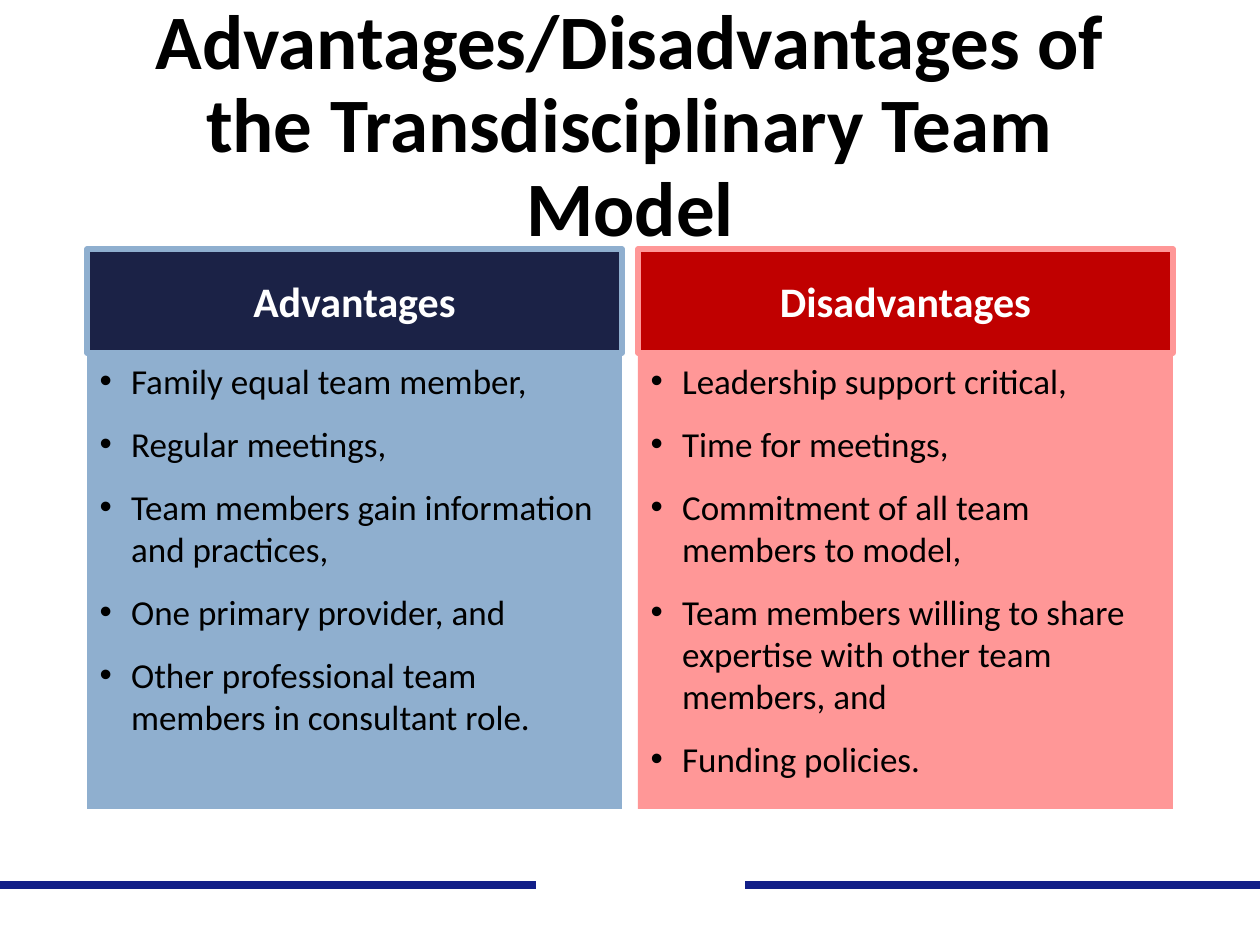
from lxml import etree
from pptx import Presentation
from pptx.dml.color import RGBColor
from pptx.enum.shapes import MSO_CONNECTOR
from pptx.enum.text import MSO_ANCHOR, MSO_AUTO_SIZE, PP_ALIGN
from pptx.oxml.ns import qn
from pptx.util import Emu, Pt

STRAIGHT = MSO_CONNECTOR.STRAIGHT
MIDDLE, TOP = MSO_ANCHOR.MIDDLE, MSO_ANCHOR.TOP
CENTER, LEFT = PP_ALIGN.CENTER, PP_ALIGN.LEFT
NO_FIT = MSO_AUTO_SIZE.NONE
SCALE = 914400 / 126  # EMU per px

COLORS = {
    "black": "000000", "white": "FFFFFF", "rule": "121F88",
    "navy": "1B2246", "blue": "8FAFCF", "red": "C00000", "pink": "FF9797",
}


def px(length):
    return Emu(round(length * SCALE))


def color(name):
    return RGBColor.from_string(COLORS[name])


deck = Presentation()
deck.slide_width, deck.slide_height = px(1260), px(945)
page = deck.slides.add_slide(deck.slide_layouts[4])  # Comparison
holders = page.placeholders

# Footer rule with a white gap in the middle
for start, end, name in [(0, 1260, "rule"), (536, 745, "white")]:
    rule = page.shapes.add_connector(STRAIGHT, px(start), px(885), px(end), px(885))
    rule.line.color.rgb = color(name)
    rule.line.width = Pt(4.5)
    etree.SubElement(rule._element.spPr, qn("a:effectLst"))

# Two columns: heading, fill of heading, fill of list, items
columns = [
    ("Advantages", "navy", "blue", [
        "Family equal team member,",
        "Regular meetings,",
        "Team members gain information and practices,",
        "One primary provider, and",
        "Other professional team members in consultant role.",
    ]),
    ("Disadvantages", "red", "pink", [
        "Leadership support critical,",
        "Time for meetings,",
        "Commitment of all team members to model,",
        "Team members willing to share expertise with other team members, and",
        "Funding policies.",
    ]),
]

# Each part: placeholder, place, fill, border, lines, size, bold, text colour, bulleted
parts = [(0, (87, 50, 1086, 156), None, None,
          ["Advantages/Disadvantages of the Transdisciplinary Team Model"],
          44, True, "black", False)]
for index, (heading, dark, light, items) in enumerate(columns):
    left = 87 + 551 * index
    parts.append((2 * index + 2, (left, 353, 535, 456), light, None,
                  items, 20, False, "black", True))
    parts.append((2 * index + 1, (left, 249, 535, 104), dark, light,
                  [heading], 24, True, "white", False))

for holder, place, fill, border, lines, size, bold, ink, bulleted in parts:
    box = holders[holder]
    box.left, box.top, box.width, box.height = map(px, place)
    if fill:
        box.fill.solid()
        box.fill.fore_color.rgb = color(fill)
    if border:
        box.line.color.rgb = color(border)
        box.line.width = Pt(3)
    frame = box.text_frame
    frame.word_wrap = True
    frame.auto_size = NO_FIT
    frame.vertical_anchor = TOP if bulleted else MIDDLE

    for number, text in enumerate(lines):
        para = frame.add_paragraph() if number else frame.paragraphs[0]
        para.alignment = LEFT if bulleted else CENTER
        para.line_spacing = 0.9 if holder == 0 else 1.0
        para.space_before = Pt(6 if number else 0)
        para.space_after = Pt(6 if bulleted else 0)
        if bulleted:
            settings = para._p.get_or_add_pPr()
            settings.set("marL", "228600")
            settings.set("indent", "-228600")
            etree.SubElement(settings, qn("a:buFont"), typeface="Arial")
            etree.SubElement(settings, qn("a:buChar"), char="•")
        span = para.add_run()
        span.text = text
        span.font.name = "Calibri"
        span.font.size = Pt(size)
        span.font.bold = bold
        span.font.color.rgb = color(ink)

deck.save("out.pptx")
